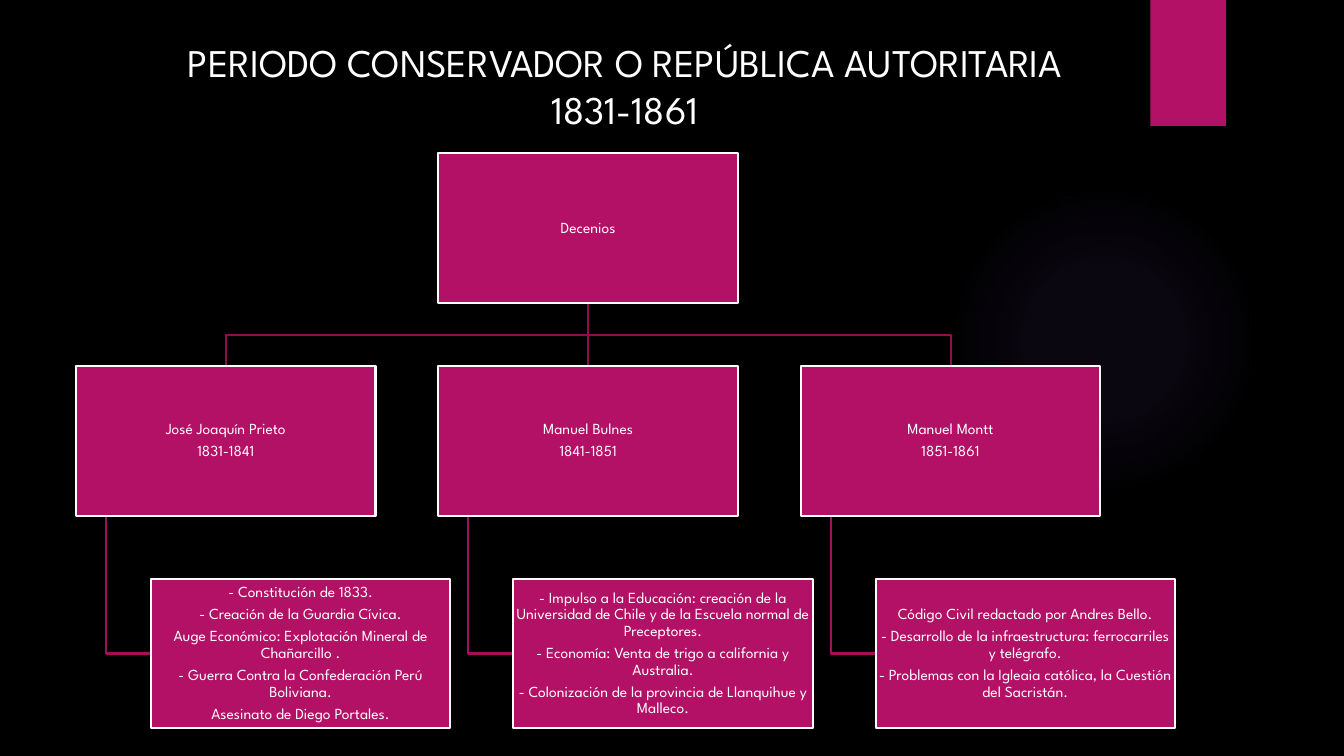
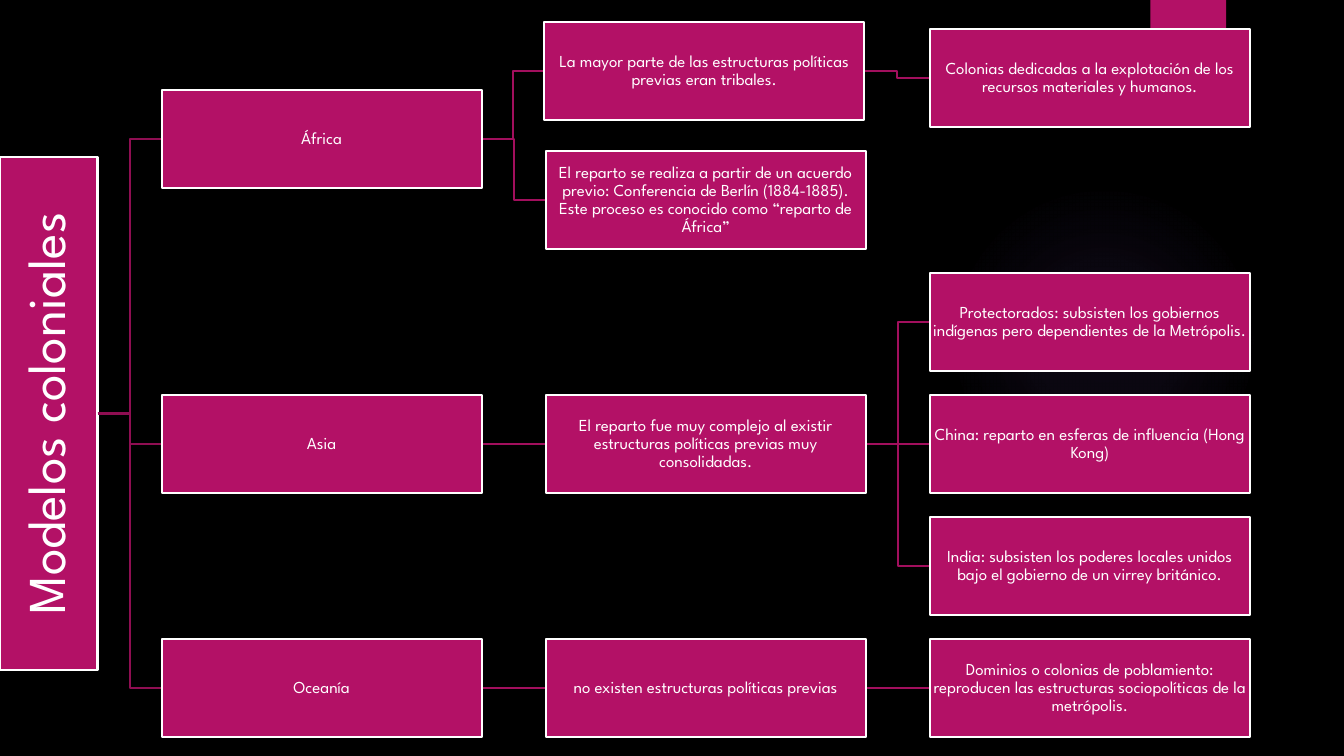
import pptx
import pptx.dml.color
import pptx.enum.shapes
import pptx.enum.text
import pptx.util
from lxml import etree
from pptx.oxml.ns import qn

FONT = "League Spartan"
BLACK, WHITE, MAGENTA = "000000", "FFFFFF", "B31166"
ROOT_LINK, CHILD_LINK = "8F0E52", "A20F5D"
GLOW = "9B6BF2"
GLOW_STOPS = [(0, 7), (36, 6), (69, 0)]  # position and opacity, in percent
LINE_WIDTH = 1.5

DECADES = [
    (["José Joaquín Prieto", "1831-1841"],
     ["- Constitución de 1833.",
      "- Creación de la Guardia Cívica.",
      "Auge Económico: Explotación Mineral de Chañarcillo .",
      "- Guerra Contra la Confederación Perú Boliviana.",
      "Asesinato de Diego Portales."]),
    (["Manuel Bulnes", "1841-1851"],
     ["- Impulso a la Educación: creación de la Universidad de Chile y de la "
      "Escuela normal de Preceptores.",
      "- Economía: Venta de trigo a california y Australia.",
      "- Colonización de la provincia de Llanquihue y Malleco."]),
    (["Manuel Montt", "1851-1861"],
     ["Código Civil redactado por Andres Bello.",
      "- Desarrollo de la infraestructura: ferrocarriles y telégrafo.",
      "- Problemas con la Igleaia católica, la Cuestión del Sacristán."]),
]

# Each node: text, row, (x, y) nudge, children
COLONIES = [
    ("África", 0.5, (0, 0), [
        ("La mayor parte de las estructuras políticas previas eran tribales.",
         0, (-1, -5), [
             ("Colonias dedicadas a la explotación de los recursos materiales "
              "y humanos.", 0, (0, 0), [])]),
        ("El reparto se realiza a partir de un acuerdo previo: Conferencia de "
         "Berlín (1884-1885). Este proceso es conocido como “reparto de "
         "África”", 1, (0, 0), [])]),
    ("Asia", 3, (0, 0), [
        ("El reparto fue muy complejo al existir estructuras políticas previas "
         "muy consolidadas.", 3, (0, 0), [
             ("Protectorados: subsisten los gobiernos indígenas pero "
              "dependientes de la Metrópolis.", 2, (0, 0), []),
             ("China: reparto en esferas de influencia (Hong Kong)",
              3, (0, 0), []),
             ("India: subsisten los poderes locales unidos bajo el gobierno de "
              "un virrey británico.", 4, (0, 0), [])])]),
    ("Oceanía", 5, (0, 0), [
        ("no existen estructuras políticas previas", 5, (0, 0), [
            ("Dominios o colonias de poblamiento: reproducen las estructuras "
             "sociopolíticas de la metrópolis.", 5, (0, 0), [])])]),
]


def pt(value):
    return pptx.util.Pt(round(value, 2))


def rgb(value):
    return pptx.dml.color.RGBColor.from_string(value)


def place(shape, left, top, width, height):
    shape.left, shape.top = pt(left), pt(top)
    shape.width, shape.height = pt(width), pt(height)


def write_text(shape, lines, *, size, spacing=0.9, after=0.35, inset=0.72):
    """Fill a shape with centred paragraphs; after is a share of the size."""
    frame = shape.text_frame
    frame.word_wrap = True
    frame.auto_size = pptx.enum.text.MSO_AUTO_SIZE.NONE
    frame.vertical_anchor = pptx.enum.text.MSO_ANCHOR.MIDDLE
    frame.margin_left = frame.margin_right = pt(inset)
    frame.margin_top = frame.margin_bottom = pt(inset)
    for index, line in enumerate(lines):
        paragraph = frame.add_paragraph() if index else frame.paragraphs[0]
        paragraph.alignment = pptx.enum.text.PP_ALIGN.CENTER
        paragraph.line_spacing = spacing
        paragraph.space_after = pt(size * after)
        run = paragraph.add_run()
        run.text = line
        run.font.name = FONT
        run.font.size = pt(size)
        run.font.color.rgb = rgb(WHITE)


def paint(shape, line=WHITE):
    shape.fill.solid()
    shape.fill.fore_color.rgb = rgb(MAGENTA)
    if line:
        shape.line.color.rgb = rgb(line)
        shape.line.width = pt(LINE_WIDTH)
    else:
        shape.line.fill.background()


def add_preset(slide, kind, left, top, width, height):
    shape = slide.shapes.add_shape(
        kind, pt(left), pt(top), pt(width), pt(height))
    shape.shadow.inherit = False
    return shape


def add_node(slide, box, lines, size):
    node = add_preset(slide, pptx.enum.shapes.MSO_SHAPE.RECTANGLE, *box)
    paint(node)
    write_text(node, lines, size=size)


def add_link(slide, points, color):
    """Draw a straight connector, or a bent line through several points."""
    corners = [(pt(x), pt(y)) for x, y in points]
    if len(corners) == 2:
        link = slide.shapes.add_connector(
            pptx.enum.shapes.MSO_CONNECTOR.STRAIGHT, *corners[0], *corners[1])
        etree.SubElement(link.line._get_or_add_ln().getparent(),
                         qn("a:effectLst"))
    else:
        builder = slide.shapes.build_freeform(*corners[0])
        builder.add_line_segments(corners[1:], close=False)
        link = builder.convert_to_shape()
        link.fill.background()
        link.shadow.inherit = False
    link.line.color.rgb = rgb(color)
    link.line.width = pt(LINE_WIDTH)


def add_glow(slide, left, top, size):
    glow = add_preset(slide, pptx.enum.shapes.MSO_SHAPE.OVAL,
                      left, top, size, size)
    glow.line.fill.background()
    glow.fill.gradient()
    gradient = glow.element.spPr.find(qn("a:gradFill"))
    for part in list(gradient):
        gradient.remove(part)
    stops = etree.SubElement(gradient, qn("a:gsLst"))
    for position, opacity in GLOW_STOPS:
        stop = etree.SubElement(stops, qn("a:gs"), pos=str(position * 1000))
        color = etree.SubElement(stop, qn("a:srgbClr"), val=GLOW)
        etree.SubElement(color, qn("a:alpha"), val=str(opacity * 1000))
    circle = etree.SubElement(gradient, qn("a:path"), path="circle")
    etree.SubElement(circle, qn("a:fillToRect"),
                     l="50000", t="50000", r="50000", b="50000")


def add_themed_slide(prs):
    """Start a slide with the shared glow and corner tab."""
    slide = prs.slides.add_slide(prs.slide_layouts[5])
    add_glow(slide, 677.5, 131.8, 221.8)
    tab = add_preset(slide, pptx.enum.shapes.MSO_SHAPE.RECTANGLE,
                     821.8, 0, 54, 90)
    paint(tab, line=None)
    return slide


def add_decade_chart(slide, left, top, width):
    """Draw the root, the presidents and their indented details."""
    node_w = width / 3.67
    node_h, gap = node_w / 2, node_w * 0.21
    step_x, step_y = node_w + gap, node_h + gap
    root_x, root_bottom = left + step_x + node_w / 2, top + node_h
    president_y, detail_y = top + step_y, top + 2 * step_y
    columns = [left + i * step_x for i in range(len(DECADES))]

    # Links
    for x in columns:
        center, trunk = x + node_w / 2, x + node_w / 10
        bend_y, detail_center = root_bottom + gap / 2, detail_y + node_h / 2
        bends = [] if x == columns[1] else [(root_x, bend_y), (center, bend_y)]
        add_link(slide, [(root_x, root_bottom), *bends, (center, president_y)],
                 ROOT_LINK)
        add_link(slide, [(trunk, president_y + node_h), (trunk, detail_center),
                         (x + node_w / 4, detail_center)], CHILD_LINK)

    # Nodes
    add_node(slide, (columns[1], top, node_w, node_h), ["Decenios"], 11)
    for x, (president, details) in zip(columns, DECADES):
        add_node(slide, (x, president_y, node_w, node_h), president, 11)
        add_node(slide, (x + node_w / 4, detail_y, node_w, node_h), details, 11)


def add_colony_tree(slide, left, top, height):
    """Draw the sideways tree, with the slide title as its root."""
    node_h = height / 7.25
    node_w, gap, row_step = node_h * 3.28, node_h * 0.656, node_h * 1.25

    def add_branch(children, x, start, color):
        for text, row, (dx, dy), grandchildren in children:
            node_x, node_y = x + dx, top + row * row_step + dy
            center = node_y + node_h / 2
            bend_x = (start[0] + node_x) / 2
            bends = []
            if abs(center - start[1]) > 0.1:
                bends = [(bend_x, start[1]), (bend_x, center)]
            add_link(slide, [start, *bends, (node_x, center)], color)
            add_branch(grandchildren, x + node_w + gap,
                       (node_x + node_w, center), CHILD_LINK)
            add_node(slide, (node_x, node_y, node_w, node_h), [text], 12)

    # Root, turned to read upwards
    root, root_length = slide.shapes.title, node_h * 5.26
    root_center = top + 2.75 * row_step + node_h / 2
    place(root, left + (node_h - root_length) / 2, root_center - node_h / 2,
          root_length, node_h)
    root.rotation = 270
    paint(root)
    write_text(root, ["Modelos coloniales"], size=38, inset=2)

    add_branch(COLONIES, left + node_h + gap, (left + node_h, root_center),
               ROOT_LINK)


def build_decades(prs):
    slide = add_themed_slide(prs)
    place(slide.shapes.title, 43.2, 23.8, 806.4, 74.9)
    write_text(slide.shapes.title,
               ["PERIODO CONSERVADOR O REPÚBLICA AUTORITARIA", "1831-1861"],
               size=28, spacing=1, after=0, inset=3.6)
    add_decade_chart(slide, 54.4, 109.6, 785)


def build_colonies(prs):
    add_colony_tree(add_themed_slide(prs), 0, 20.9, 505.4)


def main():
    prs = pptx.Presentation()
    prs.slide_width, prs.slide_height = pt(960), pt(540)
    background = prs.slide_master.background.fill
    background.solid()
    background.fore_color.rgb = rgb(BLACK)
    build_decades(prs)
    build_colonies(prs)
    prs.save("out.pptx")


if __name__ == "__main__":
    main()
